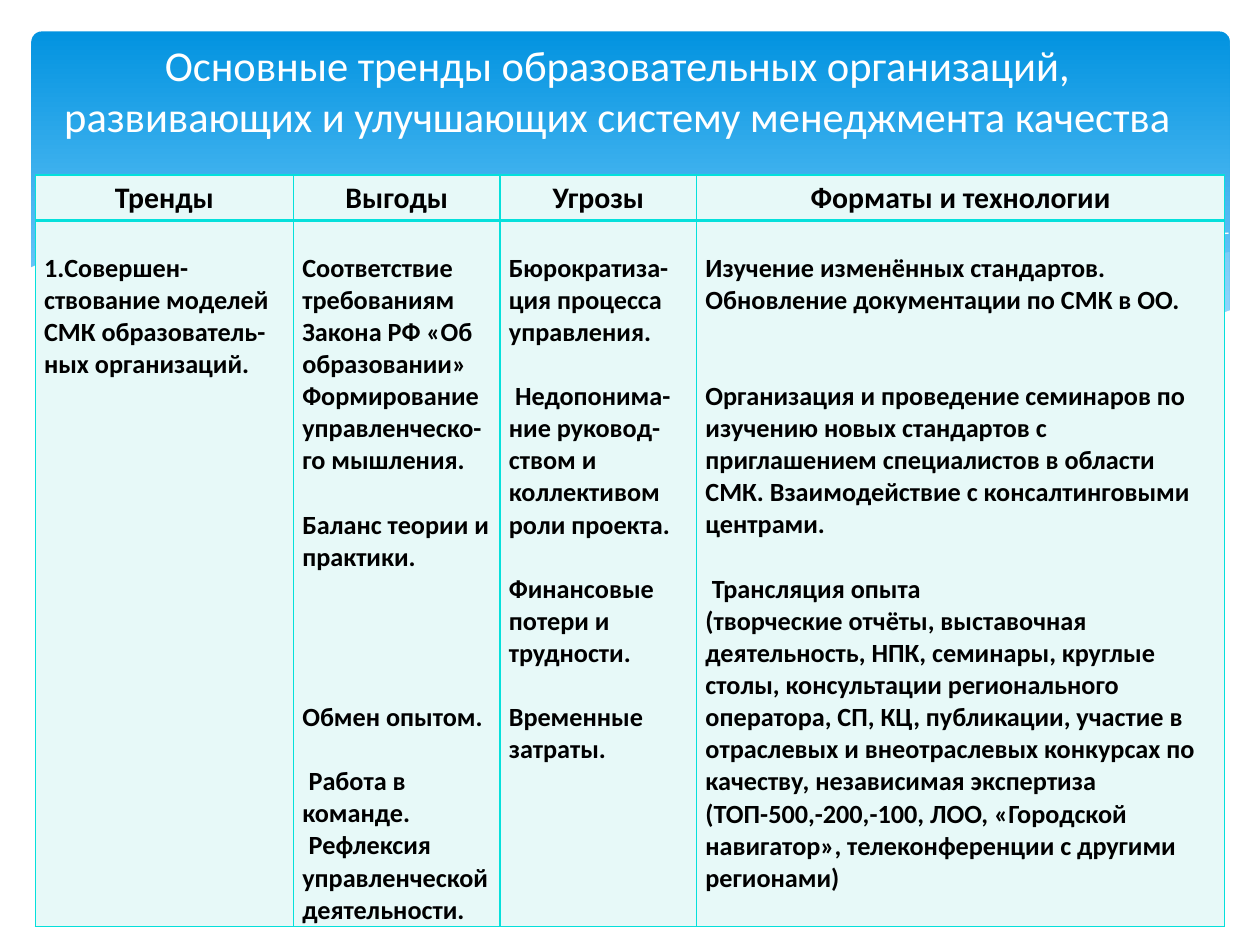
from lxml import etree
from pptx import Presentation, util as u
from pptx.dml.color import RGBColor
from pptx.enum import shapes, text
from pptx.oxml.ns import qn

FONT = "Calibri"
CYAN, MINT, WHITE, BLACK = "05E0DB", "E7F9F8", "FFFFFF", "000000"
LINE_PT = 18.3  # height of one 15 pt line

TITLE = ("Основные тренды образовательных организаций, "
         "развивающих и улучшающих систему менеджмента качества")
HEADERS = ["Тренды", "Выгоды", "Угрозы", "Форматы и технологии"]
COLUMNS = [2.05, 1.64, 1.56, 4.19]
ROWS = [0.36, 5.47]

# Each paragraph: wording, lines of space before it, first-line indent in inches
BODY = [
    [("1.Совершен-ствование моделей СМК образователь-ных организаций.", 0, 0)],
    [("Соответствие требованиям Закона РФ «Об образовании»", 0, 0),
     ("Формирование управленческо-го мышления.", 0, 0),
     ("Баланс теории и практики.", 1, 0),
     ("Обмен опытом.", 4, 0),
     ("Работа в команде.", 1, 0.05),
     ("Рефлексия", 0, 0.05),
     ("управленческой деятельности.", 0, 0)],
    [("Бюрократиза-ция процесса управления.", 0, 0),
     ("Недопонима-ние руковод-ством и коллективом роли проекта.", 1, 0.05),
     ("Финансовые потери и трудности.", 1, 0),
     ("Временные затраты.", 1, 0)],
    [("Изучение изменённых стандартов. Обновление документации по СМК в ОО.", 0, 0),
     ("Организация и проведение семинаров по изучению новых стандартов с "
      "приглашением специалистов в области СМК. Взаимодействие с "
      "консалтинговыми центрами.", 2, 0),
     ("Трансляция опыта", 1, 0.05),
     ("(творческие отчёты, выставочная деятельность, НПК, семинары, круглые "
      "столы, консультации регионального оператора, СП, КЦ, публикации, участие "
      "в отраслевых и внеотраслевых конкурсах по качеству, независимая "
      "экспертиза", 0, 0),
     ("(ТОП-500,-200,-100, ЛОО, «Городской навигатор», телеконференции с "
      "другими регионами)", 0, 0)],
]

# Wave outlines in inches
RIGHT_WAVE = [(9.76, 2), (9.48, 2.04), (9.06, 2.13), (8.61, 2.23), (8.05, 2.37),
              (7.53, 2.48), (6.61, 2.65), (7.05, 2.71), (7.57, 2.76), (8.03, 2.78),
              (8.54, 2.76), (8.97, 2.7), (9.35, 2.62), (9.76, 2.47)]
MIDDLE_WAVE = [(8.93, 2.73), (8.37, 2.65), (7.75, 2.54), (7.06, 2.4), (6.29, 2.22),
               (5.69, 2.08), (5.14, 1.98), (4.65, 1.91), (4.2, 1.87), (3.61, 1.85),
               (2.86, 1.91), (3.42, 1.99), (4.04, 2.11), (4.91, 2.32), (5.66, 2.48),
               (6.34, 2.61), (6.95, 2.7), (7.48, 2.76), (8.07, 2.78), (8.57, 2.77)]
LONG_CURVE = [(3.09, 1.95), (3.44, 1.9), (4.01, 1.87), (4.5, 1.88), (5.1, 1.92),
              (5.82, 2), (6.36, 2.08), (6.95, 2.19), (7.6, 2.33), (8.31, 2.51),
              (9.07, 2.72)]
SHORT_CURVE = [(6.13, 2.57), (6.72, 2.41), (7.48, 2.23), (8.06, 2.1), (8.66, 1.99),
               (9.1, 1.92), (9.51, 1.87), (9.75, 1.85)]
WHITE_WAVE = [(9.77, 2.46), (9.5, 2.56), (9.1, 2.67), (8.63, 2.74), (8.09, 2.77),
              (7.44, 2.74), (6.68, 2.65), (6.03, 2.54), (5.29, 2.39), (4.47, 2.2),
              (3.91, 2.07), (3.4, 1.97), (2.92, 1.9), (2.5, 1.86), (1.93, 1.84),
              (1.46, 1.85), (1.06, 1.89), (0.76, 1.95), (0.52, 2.01), (0.36, 2.07),
              (0.23, 2.13), (0.23, 3.29), (9.77, 3.29)]


def color(hex_value):
    return RGBColor.from_string(hex_value)


def add_span(para, wording, size, hex_value, bold=False):
    span = para.add_run()
    span.text = wording
    span.font.name = FONT
    span.font.size = u.Pt(size)
    span.font.bold = bold
    span.font.color.rgb = color(hex_value)


def add_banner(page):
    banner = page.shapes.add_shape(
        shapes.MSO_SHAPE.ROUNDED_RECTANGLE,
        u.Inches(0.25), u.Inches(0.25), u.Inches(9.51), u.Inches(2.7))
    banner.adjustments[0] = 0.03
    banner.shadow.inherit = False
    banner.line.fill.background()
    banner.fill.gradient()
    banner.fill.gradient_angle = 270
    stops = [(0, "0293E0"), (0.9, "83D3FE")]
    for stop, (position, hex_value) in zip(banner.fill.gradient_stops, stops):
        stop.position = position
        stop.color.rgb = color(hex_value)


def add_outline(page, points, closed):
    corners = [(u.Inches(x), u.Inches(y)) for x, y in points]
    builder = page.shapes.build_freeform(*corners[0])
    builder.add_line_segments(corners[1:], close=closed)
    outline = builder.convert_to_shape()
    outline.shadow.inherit = False
    return outline


def add_wave(page, points, hex_value, opacity=100):
    wave = add_outline(page, points, closed=True)
    wave.line.fill.background()
    wave.fill.solid()
    wave.fill.fore_color.rgb = color(hex_value)
    if opacity < 100:
        tint = wave.fill._xPr.find(".//" + qn("a:srgbClr"))
        etree.SubElement(tint, qn("a:alpha"), val=str(opacity * 1000))


def add_curve(page, points):
    curve = add_outline(page, points, closed=False)
    curve.fill.background()
    curve.line.color.rgb = color(WHITE)
    curve.line.width = u.Pt(0)


def set_borders(cell, widths):
    properties = cell._tc.get_or_add_tcPr()
    for index, (side, width) in enumerate(widths.items()):
        edge = etree.Element(qn("a:ln" + side), w=str(u.Pt(width)))
        fill = etree.SubElement(edge, qn("a:solidFill"))
        etree.SubElement(fill, qn("a:srgbClr"), val=CYAN)
        properties.insert(index, edge)


def style_cell(cell, top_margin, widths):
    cell.margin_left = cell.margin_right = u.Inches(0.07)
    cell.margin_top = u.Inches(top_margin)
    cell.margin_bottom = 0
    cell.fill.solid()
    cell.fill.fore_color.rgb = color(MINT)
    set_borders(cell, widths)


def fill_header(cell, wording):
    style_cell(cell, 0, {"L": 1, "R": 1, "T": 1, "B": 2})
    cell.vertical_anchor = text.MSO_ANCHOR.MIDDLE
    para = cell.text_frame.paragraphs[0]
    para.alignment = text.PP_ALIGN.CENTER
    add_span(para, wording, 17, BLACK, bold=True)


def fill_body(cell, items):
    style_cell(cell, 0.25, {"L": 1, "R": 1, "T": 2, "B": 1})
    frame = cell.text_frame
    for index, (wording, lines_before, indent) in enumerate(items):
        para = frame.add_paragraph() if index else frame.paragraphs[0]
        para.space_before = u.Pt(lines_before * LINE_PT)
        if indent:
            para._p.get_or_add_pPr().set("indent", str(u.Inches(indent)))
        add_span(para, wording, 15, BLACK, bold=True)


def add_trends_table(page):
    table = page.shapes.add_table(
        len(ROWS), len(COLUMNS), u.Inches(0.28), u.Inches(1.39),
        u.Inches(sum(COLUMNS)), u.Inches(sum(ROWS))).table
    for row, height in zip(table.rows, ROWS):
        row.height = u.Inches(height)
    for index, width in enumerate(COLUMNS):
        table.columns[index].width = u.Inches(width)
        fill_header(table.cell(0, index), HEADERS[index])
        fill_body(table.cell(1, index), BODY[index])


def place_title(page):
    title = page.shapes.title
    title.left, title.top = u.Inches(0.28), u.Inches(0.21)
    title.width, title.height = u.Inches(9.24), u.Inches(1.01)
    frame = title.text_frame
    frame.word_wrap = True
    frame.auto_size = text.MSO_AUTO_SIZE.NONE
    frame.vertical_anchor = text.MSO_ANCHOR.MIDDLE
    para = frame.paragraphs[0]
    para.alignment = text.PP_ALIGN.CENTER
    add_span(para, TITLE, 24.3, WHITE)
    page.shapes._spTree.append(title._element)  # bring to front


def main():
    deck = Presentation()
    deck.slide_width, deck.slide_height = u.Inches(10), u.Inches(7.5)
    page = deck.slides.add_slide(deck.slide_layouts[5])
    # Banner with waves
    add_banner(page)
    add_wave(page, RIGHT_WAVE, "C6E7FC", 29)
    add_wave(page, MIDDLE_WAVE, "C6E7FC", 40)
    add_curve(page, LONG_CURVE)
    add_curve(page, SHORT_CURVE)
    add_wave(page, WHITE_WAVE, WHITE)
    # Content
    add_trends_table(page)
    place_title(page)
    deck.save("out.pptx")


if __name__ == "__main__":
    main()
